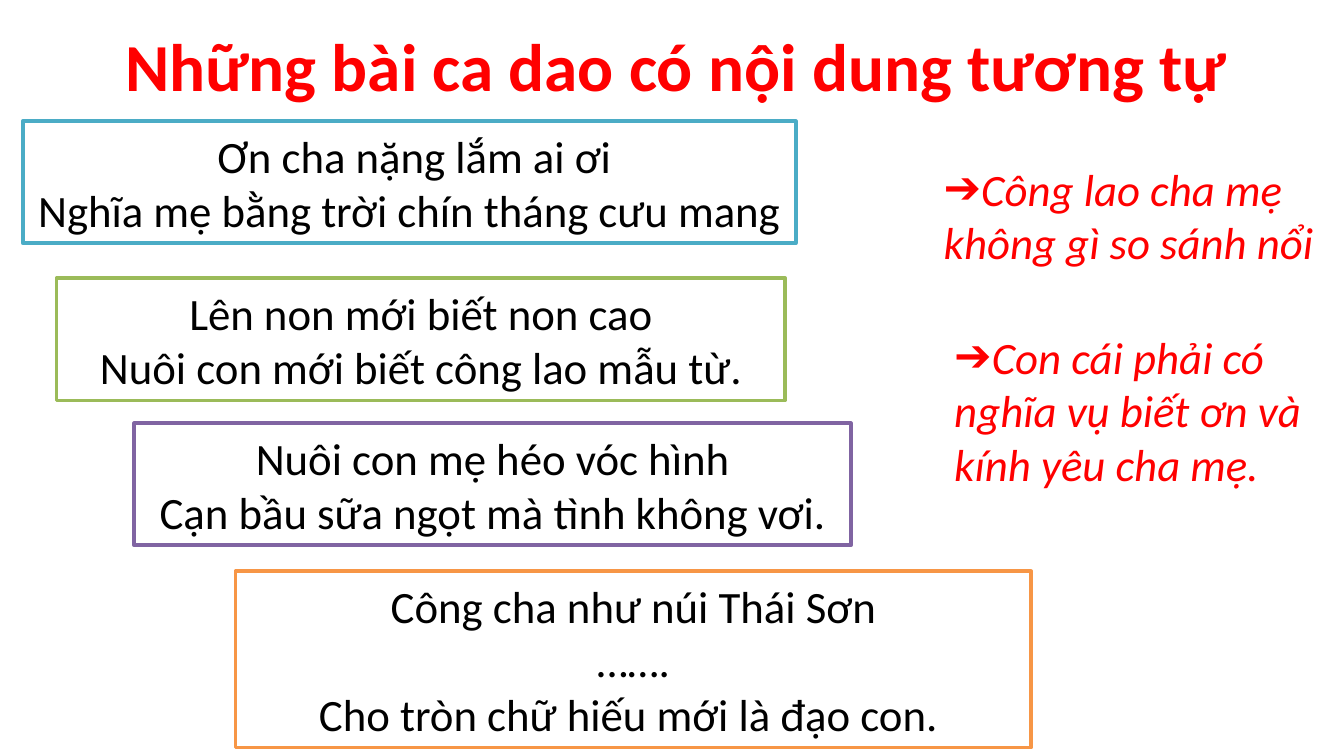
"""Builds a slide of Vietnamese folk verses about gratitude to parents."""
from dataclasses import dataclass

from lxml import etree
from pptx import Presentation
from pptx import util as u
from pptx.dml.color import RGBColor
from pptx.enum import shapes, text
from pptx.oxml import ns


@dataclass(frozen=True)
class Theme:
    """Colours, font and type sizes of the slide."""
    font: str = "Calibri"
    paper: str = "FFFFFF"
    ink: str = "000000"
    accent: str = "FF0000"
    title_size: int = 36
    body_size: int = 24
    border: int = 2


THEME = Theme()
TITLE = "Những bài ca dao có nội dung tương tự"
VERSES = [
    ("4BACC6", (0.43, 2.29, 14.61, 2.31),
     " Ơn cha nặng lắm ai ơi\nNghĩa mẹ bằng trời chín tháng cưu mang"),
    ("9BBB59", (1.07, 5.26, 13.77, 2.31),
     "Lên non mới biết non cao\nNuôi con mới biết công lao mẫu từ."),
    ("8064A2", (2.54, 8, 13.54, 2.31),
     "Nuôi con mẹ héo vóc hình\nCạn bầu sữa ngọt mà tình không vơi."),
    ("F79646", (4.45, 10.8, 15.04, 3.33),
     "Công cha như núi Thái Sơn\n…….\nCho tròn chữ hiếu mới là đạo con. "),
]
LESSONS = [
    ((17.58, 2.92, 7.82, 2.31), "Công lao cha mẹ không gì so sánh nổi"),
    ((17.78, 6.1, 7.82, 3.33), "Con cái phải có nghĩa vụ biết ơn và kính yêu cha mẹ."),
]


def apply_format(target, values):
    """Set each named attribute on the target."""
    for name, value in values.items():
        setattr(target, name, value)


def place(box, frame):
    """Move and size a box from lengths in centimetres."""
    apply_format(box, dict(zip(("left", "top", "width", "height"), map(u.Cm, frame))))


def write(box, wording, size, color, align, anchor, wrap=True, **style):
    """Fill a box with one formatted paragraph and return it."""
    apply_format(box.text_frame, {
        "word_wrap": wrap,
        "auto_size": text.MSO_AUTO_SIZE.SHAPE_TO_FIT_TEXT,
        "vertical_anchor": anchor,
    })
    para = box.text_frame.paragraphs[0]
    para.text = wording
    apply_format(para, {"alignment": align, "space_before": u.Pt(0)})
    for span in para.runs:
        apply_format(span.font, {"name": THEME.font, "size": u.Pt(size), **style})
        span.font.color.rgb = RGBColor.from_string(color)
    return para


def add_title(page):
    """Write the heading in the title placeholder."""
    box = page.shapes.title
    place(box, (2.11, 0.33, 21.92, 1.8))
    write(box, TITLE, THEME.title_size, THEME.accent, text.PP_ALIGN.LEFT,
          text.MSO_ANCHOR.TOP, wrap=False, bold=True)


def add_verse(page, color, frame, wording):
    """Add a bordered box with a centred verse."""
    box = page.shapes.add_shape(shapes.MSO_SHAPE.RECTANGLE, *map(u.Cm, frame))
    box.shadow.inherit = False
    box.fill.solid()
    box.fill.fore_color.rgb = RGBColor.from_string(THEME.paper)
    box.line.color.rgb = RGBColor.from_string(color)
    box.line.width = u.Pt(THEME.border)
    write(box, wording, THEME.body_size, THEME.ink, text.PP_ALIGN.CENTER,
          text.MSO_ANCHOR.MIDDLE)


def fill_lesson(box, frame, wording):
    """Write an arrow-bulleted lesson in a body placeholder."""
    place(box, frame)
    para = write(box, wording, THEME.body_size, THEME.accent, text.PP_ALIGN.LEFT,
                 text.MSO_ANCHOR.TOP, italic=True)
    properties = para._p.get_or_add_pPr()
    for name in ("marL", "indent"):
        properties.set(name, "0")
    etree.SubElement(properties, ns.qn("a:buChar")).set("char", "➔")


def main():
    """Build and save the deck."""
    deck = Presentation()
    apply_format(deck, {"slide_width": u.Cm(25.4), "slide_height": u.Cm(14.29)})
    page = deck.slides.add_slide(deck.slide_layouts.get_by_name("Two Content"))
    add_title(page)
    for verse in VERSES:
        add_verse(page, *verse)
    bodies = list(page.placeholders)[1:]
    for box, lesson in zip(bodies, LESSONS):
        fill_lesson(box, *lesson)
    deck.save("out.pptx")


if __name__ == "__main__":
    main()
